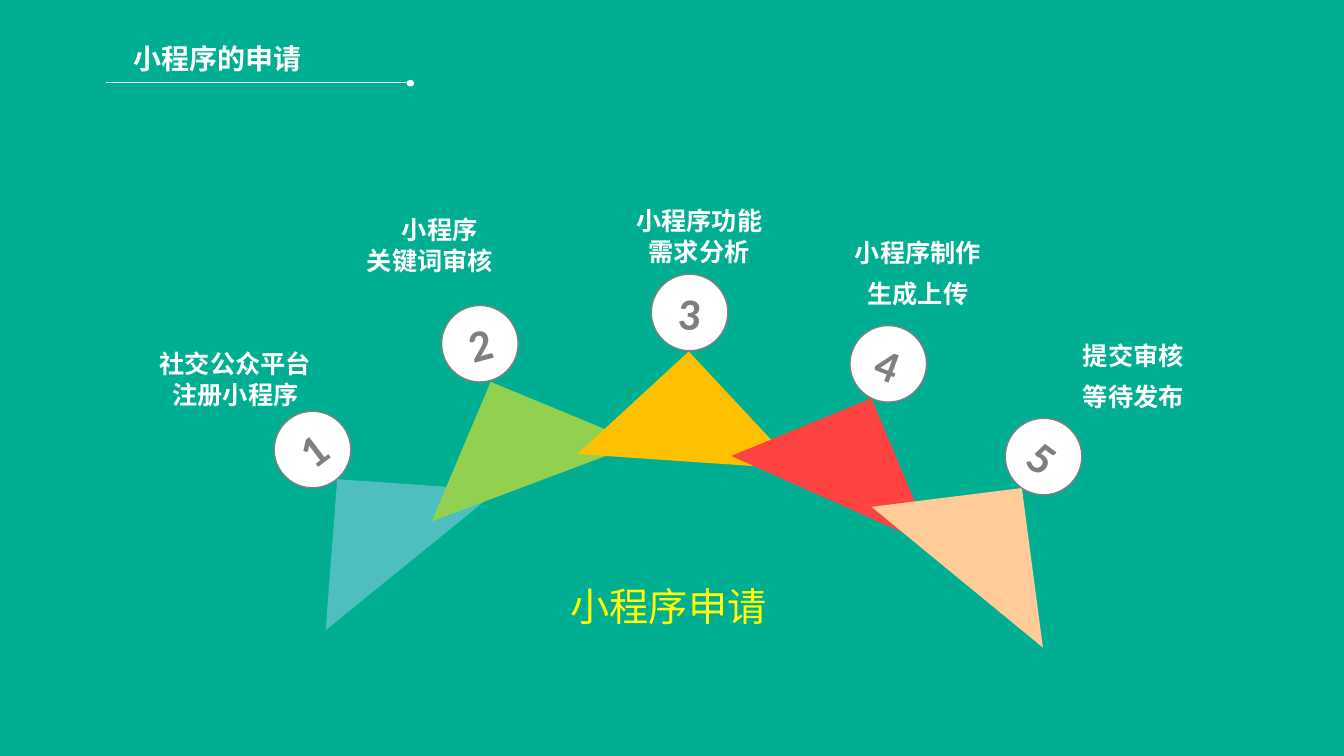
from lxml import etree
from pptx import Presentation
from pptx import util as u
from pptx.dml.color import RGBColor
from pptx.enum import shapes, text
from pptx.oxml import ns

WHITE, GREY, GREEN, YELLOW = "FFFFFF", "7F7F7F", "00AF92", "FFFF00"
CJK, LATIN = "Noto Sans CJK SC", "Calibri"
LEFT, CENTER = text.PP_ALIGN.LEFT, text.PP_ALIGN.CENTER
TIGHT = {"line_spacing": 1.0, "space_before": u.Pt(0)}
LOOSE = {"line_spacing": 0.9, "space_before": u.Pt(10)}


def rgb(value):
    return RGBColor.from_string(value)


def assign(target, values):
    for name, value in values.items():
        setattr(target, name, value)


def inches(*lengths):
    return [u.Inches(length) for length in lengths]


class StepSlide:
    def __init__(self, deck, background):
        self.slide = deck.slides.add_slide(deck.slide_layouts[5])
        self.slide.background.fill.solid()
        self.slide.background.fill.fore_color.rgb = rgb(background)

    def set_lines(self, frame, lines, size, color, bold=True, font=CJK, align=CENTER, spacing=TIGHT):
        frame.word_wrap = True
        for index, line in enumerate(lines):
            paragraph = frame.paragraphs[0] if index == 0 else frame.add_paragraph()
            assign(paragraph, {"alignment": align, **spacing})
            run = paragraph.add_run()
            run.text = line
            assign(run.font, {"name": font, "size": u.Pt(size), "bold": bold})
            run.font.color.rgb = rgb(color)
            east_asian = etree.SubElement(run.font._element, ns.qn("a:ea"))
            east_asian.set("typeface", font)

    def title(self, box, line):
        heading = self.slide.shapes.title
        assign(heading, dict(zip(("left", "top", "width", "height"), inches(*box))))
        assign(heading.text_frame, {"vertical_anchor": text.MSO_ANCHOR.TOP,
                                    "auto_size": text.MSO_AUTO_SIZE.NONE})
        self.set_lines(heading.text_frame, [line], 20, WHITE, align=LEFT)

    def label(self, box, lines, size=18, color=WHITE, **style):
        frame = self.slide.shapes.add_textbox(*inches(*box)).text_frame
        self.set_lines(frame, lines, size, color, **style)
        return frame

    def rule(self, start, end):
        underline = self.slide.shapes.add_connector(
            shapes.MSO_CONNECTOR.STRAIGHT, *inches(*start, *end))
        underline.line.color.rgb = rgb(WHITE)
        underline.line.width = u.Pt(0.5)
        etree.SubElement(underline._element.spPr, ns.qn("a:effectLst"))

    def shape(self, kind, box, fill, outline=None, rotation=0):
        drawn = self.slide.shapes.add_shape(kind, *inches(*box))
        drawn.rotation = rotation
        drawn.shadow.inherit = False
        drawn.fill.solid()
        drawn.fill.fore_color.rgb = rgb(fill)
        if outline:
            drawn.line.color.rgb = rgb(outline)
            drawn.line.width = u.Pt(1)
        else:
            drawn.line.fill.background()
        return drawn

    def blade(self, left, top, rotation, fill):
        triangle = self.shape(shapes.MSO_SHAPE.ISOSCELES_TRIANGLE,
                              (left, top, 2.2, 1.09), fill, rotation=rotation)
        triangle.adjustments[0] = 0.47

    def badge(self, number, left, top, rotation):
        circle = self.shape(shapes.MSO_SHAPE.OVAL, (left, top, 0.76, 0.76),
                            WHITE, GREY, rotation)
        circle.text_frame.vertical_anchor = text.MSO_ANCHOR.MIDDLE
        self.set_lines(circle.text_frame, [str(number)], 32, GREY, font=LATIN)


def main():
    deck = Presentation()
    assign(deck, {"slide_width": u.Inches(13.33), "slide_height": u.Inches(7.5)})
    page = StepSlide(deck, GREEN)

    page.rule((1.05, 0.82), (4.03, 0.82))
    page.shape(shapes.MSO_SHAPE.OVAL, (4.04, 0.8, 0.06, 0.05), WHITE, WHITE)
    page.title((1.22, 0.36, 2.82, 0.44), "小程序的申请")

    page.label((1.42, 3.41, 1.83, 0.71), ["社交公众平台注册小程序"])
    keywords = page.label((3.25, 2.08, 2.22, 0.71), ["小程序", "关键词审核"])
    review = keywords.paragraphs[1]
    review.alignment = LEFT
    review._p.get_or_add_pPr().set("marL", str(u.Inches(0.29)))
    page.label((6.17, 1.99, 1.53, 0.71), ["小程序功能", "需求分析"])
    page.label((8.32, 2.34, 1.57, 0.78), ["小程序制作", "生成上传"], spacing=LOOSE)
    page.label((10.43, 3.36, 1.62, 0.78), ["提交审核", "等待发布"], spacing=LOOSE)
    page.label((4.47, 5.73, 4.32, 0.57), ["小程序申请"], 28, YELLOW, bold=False)

    blades = [
        (2.64, 4.59, 320.9, "4DBFBF"),
        (4.02, 3.73, 339.4, "92D050"),
        (5.76, 3.49, 3.9, "FFC000"),
        (7.38, 3.93, 24.1, "FF4343"),
        (8.74, 4.76, 39.4, "FFCC99"),
    ]
    badges = [
        (2.72, 4.08, 322.7),
        (4.38, 3.03, 345.3),
        (6.46, 2.72, 3.5),
        (8.43, 3.23, 20.9),
        (9.97, 4.15, 36.7),
    ]
    for blade in blades:
        page.blade(*blade)
    for number, badge in enumerate(badges, 1):
        page.badge(number, *badge)

    deck.save("out.pptx")


if __name__ == "__main__":
    main()
